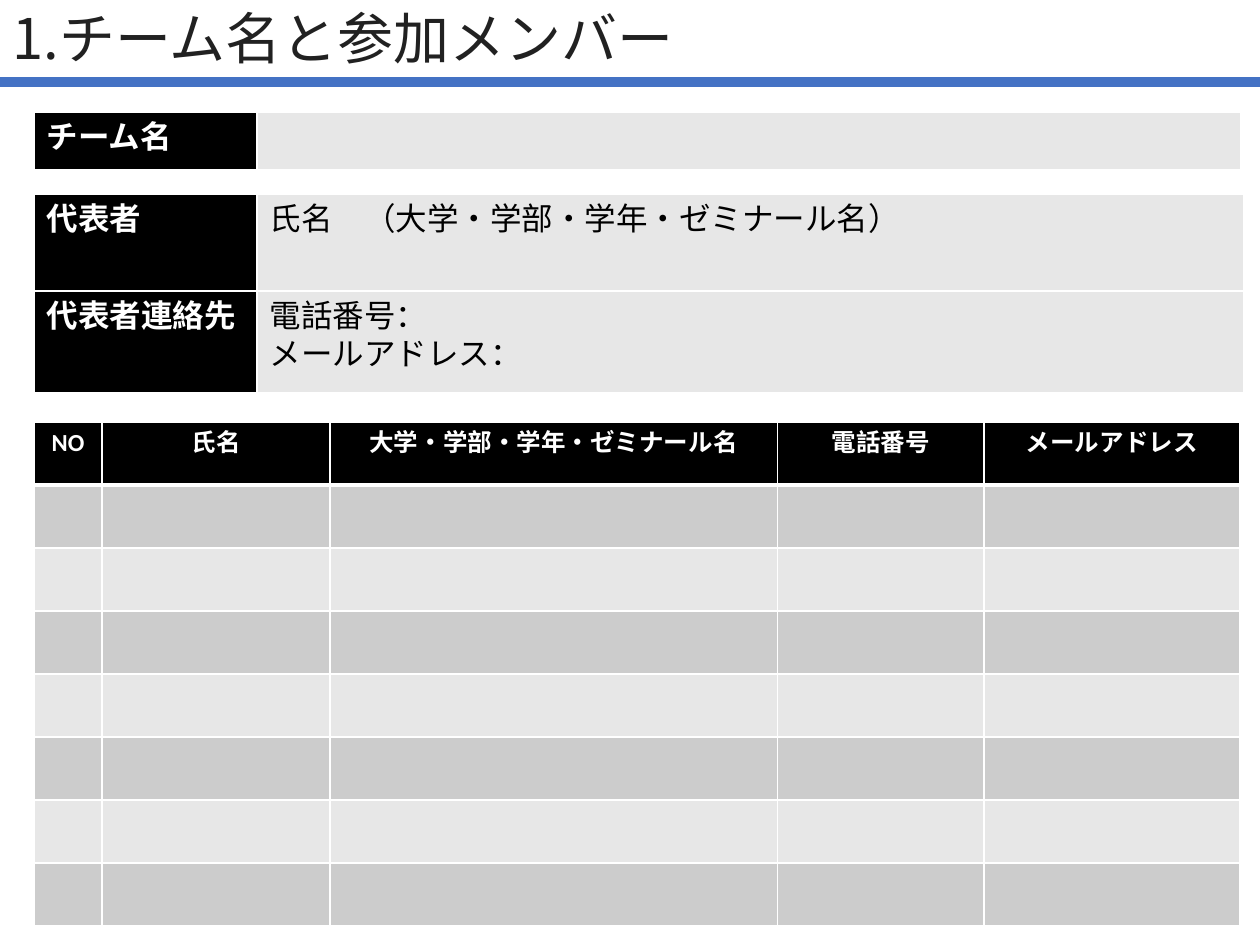
from lxml.etree import SubElement
from pptx import Presentation
from pptx.dml.color import RGBColor
from pptx.enum.shapes import MSO_CONNECTOR
from pptx.enum.text import MSO_ANCHOR, PP_ALIGN
from pptx.oxml.ns import qn
from pptx.util import Inches, Pt

WHITE, BLACK, LIGHT, DARK = "FFFFFF", "000000", "E7E7E7", "CCCCCC"
LEFT = 0.27
LABEL_WIDTH = 1.77
MEMBER_ROWS = 7


def color(value):
    return RGBColor.from_string(value)


def set_font(p, name, size, value, bold=False):
    """Format a paragraph and use the same typeface for East Asian text."""
    p.font.name = name
    p.font.size = Pt(size)
    p.font.bold = bold
    p.font.color.rgb = color(value)
    for r in p.runs:
        r.font.name = name
        latin = r.font._element.find(qn("a:latin"))
        ea = latin.makeelement(qn("a:ea"), {"typeface": name})
        latin.addnext(ea)


def set_borders(cell, bottom):
    tcPr = cell._tc.get_or_add_tcPr()
    widths = {"lnL": 1, "lnR": 1, "lnT": 1, "lnB": bottom}
    for index, (tag, width) in enumerate(widths.items()):
        ln = tcPr.makeelement(qn(f"a:{tag}"), {"w": str(Pt(width))})
        fill = SubElement(ln, qn("a:solidFill"))
        SubElement(fill, qn("a:srgbClr"), val=WHITE)
        tcPr.insert(index, ln)


def fill_cell(cell, fill, text="", size=18, value=BLACK, bold=False,
              align=PP_ALIGN.LEFT, bottom=1):
    cell.fill.solid()
    cell.fill.fore_color.rgb = color(fill)
    set_borders(cell, bottom)
    cell.text = text
    for p in cell.text_frame.paragraphs:
        p.alignment = align
        set_font(p, "Calibri", size, value, bold)


def add_grid(s, top, widths, heights):
    frame = s.shapes.add_table(len(heights), len(widths), Inches(LEFT), Inches(top),
                               Inches(sum(widths)), Inches(sum(heights)))
    table = frame.table
    table.horz_banding = False
    table.first_row = False
    for column, width in zip(table.columns, widths):
        column.width = Inches(width)
    for row, height in zip(table.rows, heights):
        row.height = Inches(height)
    return table


def add_form(s, top, value_width, heights, entries):
    """Add a table of black labels beside light answer cells."""
    table = add_grid(s, top, [LABEL_WIDTH, value_width], heights)
    for i, (label, answer) in enumerate(entries):
        fill_cell(table.cell(i, 0), BLACK, label, value=WHITE, bold=True)
        fill_cell(table.cell(i, 1), LIGHT, answer)


def add_members(s, top, columns):
    table = add_grid(s, top, list(columns.values()), [0.5] * (MEMBER_ROWS + 1))
    table.first_row = True
    for j, heading in enumerate(columns):
        fill_cell(table.cell(0, j), BLACK, heading, 14, WHITE, True,
                  PP_ALIGN.CENTER, bottom=3)
        for i in range(1, MEMBER_ROWS + 1):
            fill_cell(table.cell(i, j), DARK if i % 2 else LIGHT)


def add_title(s, text):
    tf = s.shapes.add_textbox(0, 0, Inches(8.62), Inches(0.65)).text_frame
    tf.word_wrap = True
    tf.vertical_anchor = MSO_ANCHOR.MIDDLE
    p = tf.paragraphs[0]
    p.text = text
    p.line_spacing = 0.9
    set_font(p, "Noto Sans CJK JP", 32, "212121")


def add_rule(s, top, width):
    line = s.shapes.add_connector(MSO_CONNECTOR.STRAIGHT, 0, Inches(top), width, Inches(top))
    line.line.color.rgb = color("4472C4")
    line.line.width = Pt(6)
    SubElement(line._element.spPr, qn("a:effectLst"))


def main():
    prs = Presentation()
    prs.slide_width, prs.slide_height = Inches(10), Inches(7.5)
    s = prs.slides.add_slide(prs.slide_layouts[6])
    add_title(s, "1.チーム名と参加メンバー")
    add_form(s, 0.89, 7.81, [0.46], [("チーム名", "")])
    add_rule(s, 0.65, prs.slide_width)
    add_form(s, 1.54, 7.83, [0.77, 0.81], [
        ("代表者", "氏名　（大学・学部・学年・ゼミナール名）"),
        ("代表者連絡先", "電話番号：\nメールアドレス："),
    ])
    add_members(s, 3.35, {
        "NO": 0.54,
        "氏名": 1.81,
        "大学・学部・学年・ゼミナール名": 3.55,
        "電話番号": 1.64,
        "メールアドレス": 2.03,
    })
    prs.save("out.pptx")


if __name__ == "__main__":
    main()
